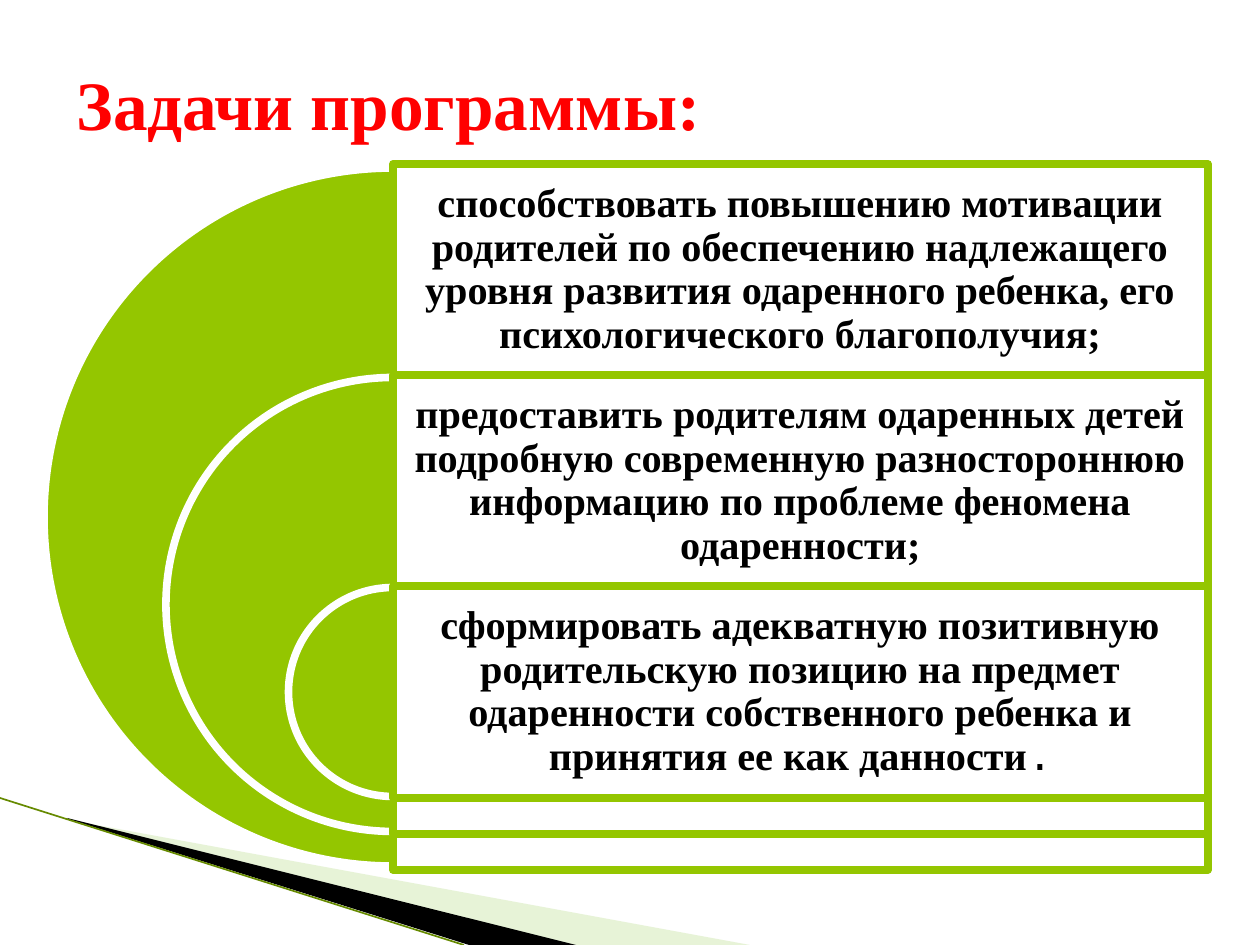
import pptx
import pptx.util
import pptx.dml.color
import pptx.enum.shapes
import pptx.enum.text
import pptx.oxml
import pptx.oxml.ns

PX = 914400 / 126
COLORS = {"green": "94C600", "pale": "C3E19D", "olive": "668A00", "white": "FFFFFF",
          "black": "000000", "red": "FF0000"}
SERIF = "Times New Roman"
SHAPES = pptx.enum.shapes.MSO_SHAPE
ANCHOR = pptx.enum.text.MSO_ANCHOR
ALIGN = pptx.enum.text.PP_ALIGN


def px(*lengths):
    return [round(length * PX) for length in lengths]


def paint(shape, fill, line=None, opacity=100):
    shape.shadow.inherit = False
    shape.fill.solid()
    shape.fill.fore_color.rgb = pptx.dml.color.RGBColor.from_string(COLORS[fill])
    if opacity < 100:
        color = shape.fill._xPr.find(".//" + pptx.oxml.ns.qn("a:srgbClr"))
        alpha = pptx.oxml.parse_xml(
            f'<a:alpha {pptx.oxml.ns.nsdecls("a")} val="{opacity * 1000}"/>')
        color.append(alpha)
    if line:
        shape.line.color.rgb = pptx.dml.color.RGBColor.from_string(COLORS[line])
        shape.line.width = pptx.util.Pt(4.33)
    else:
        shape.line.fill.background()


presentation = pptx.Presentation()
presentation.slide_width, presentation.slide_height = px(1260, 945)
slide = presentation.slides.add_slide(presentation.slide_layouts[5])

# Corner decoration
wedges = [
    ([(69, 820), (750, 945), (575, 945), (69, 819)], "pale", 40),
    ([(67, 818), (576, 945), (469, 945), (68, 819)], "black", 100),
]
for points, color, opacity in wedges:
    builder = slide.shapes.build_freeform(*points[0], scale=PX)
    builder.add_line_segments(points[1:], close=True)
    paint(builder.convert_to_shape(), color, opacity=opacity)

edge = slide.shapes.add_connector(pptx.enum.shapes.MSO_CONNECTOR.STRAIGHT,
                                  *px(0, 798, 464, 945))
edge.line.color.rgb = pptx.dml.color.RGBColor.from_string(COLORS["olive"])
edge.line.width = pptx.util.Pt(0.95)
edge._element.spPr.append(
    pptx.oxml.parse_xml(f'<a:effectLst {pptx.oxml.ns.nsdecls("a")}/>'))

# Nested half circles, each with its task panel
LEFT, WIDTH, TOP, BOTTOM = 393, 815, 164, 870
ROW, INSET, TASK_HEIGHT = 211, 36, 212
tasks = [
    (698, [("способствовать повышению мотивации родителей по обеспечению надлежащего "
            "уровня развития одаренного ребенка, его психологического благополучия;",
            SERIF, True)]),
    (454, [("предоставить родителям одаренных детей подробную современную "
            "разностороннюю информацию по проблеме феномена одаренности;", SERIF, True)]),
    (209, [("сформировать адекватную позитивную родительскую позицию на предмет "
            "одаренности собственного ребенка и принятия ее как данности", SERIF, True),
           (".", "DejaVu Sans Mono", False)]),
]
for level, (diameter, runs) in enumerate(tasks):
    top = TOP + level * ROW
    bottom = BOTTOM - level * INSET
    half_circle = slide.shapes.add_shape(
        SHAPES.PIE, *px(LEFT - diameter / 2, (top + bottom - diameter) / 2,
                        diameter, diameter))
    half_circle.adjustments[0] = 54
    half_circle.adjustments[1] = 162
    paint(half_circle, "green", "white")

    panel = slide.shapes.add_shape(SHAPES.RECTANGLE, *px(LEFT, top, WIDTH, bottom - top))
    paint(panel, "white", "green", 90)

    task = slide.shapes.add_textbox(*px(LEFT, top, WIDTH, TASK_HEIGHT)).text_frame
    task.word_wrap = True
    task.vertical_anchor = ANCHOR.MIDDLE
    task.margin_left, task.margin_right, task.margin_top, task.margin_bottom = px(12, 12, 12, 12)
    paragraph = task.paragraphs[0]
    paragraph.alignment = ALIGN.CENTER
    paragraph.line_spacing = 0.9
    for text, font_name, bold in runs:
        run = paragraph.add_run()
        run.text = text
        run.font.name = font_name
        run.font.size = pptx.util.Pt(23)
        run.font.bold = bold
        run.font.color.rgb = pptx.dml.color.RGBColor.from_string(COLORS["black"])

# Title
title = slide.shapes.title
title.left, title.top, title.width, title.height = px(64, 61, 1033, 117)
heading = title.text_frame
heading.word_wrap = True
heading.vertical_anchor = ANCHOR.TOP
heading.margin_top = 0
heading.paragraphs[0].alignment = ALIGN.LEFT
run = heading.paragraphs[0].add_run()
run.text = "Задачи программы:"
run.font.name = SERIF
run.font.size = pptx.util.Pt(39.6)
run.font.bold = True
run.font.color.rgb = pptx.dml.color.RGBColor.from_string(COLORS["red"])

presentation.save("out.pptx")
